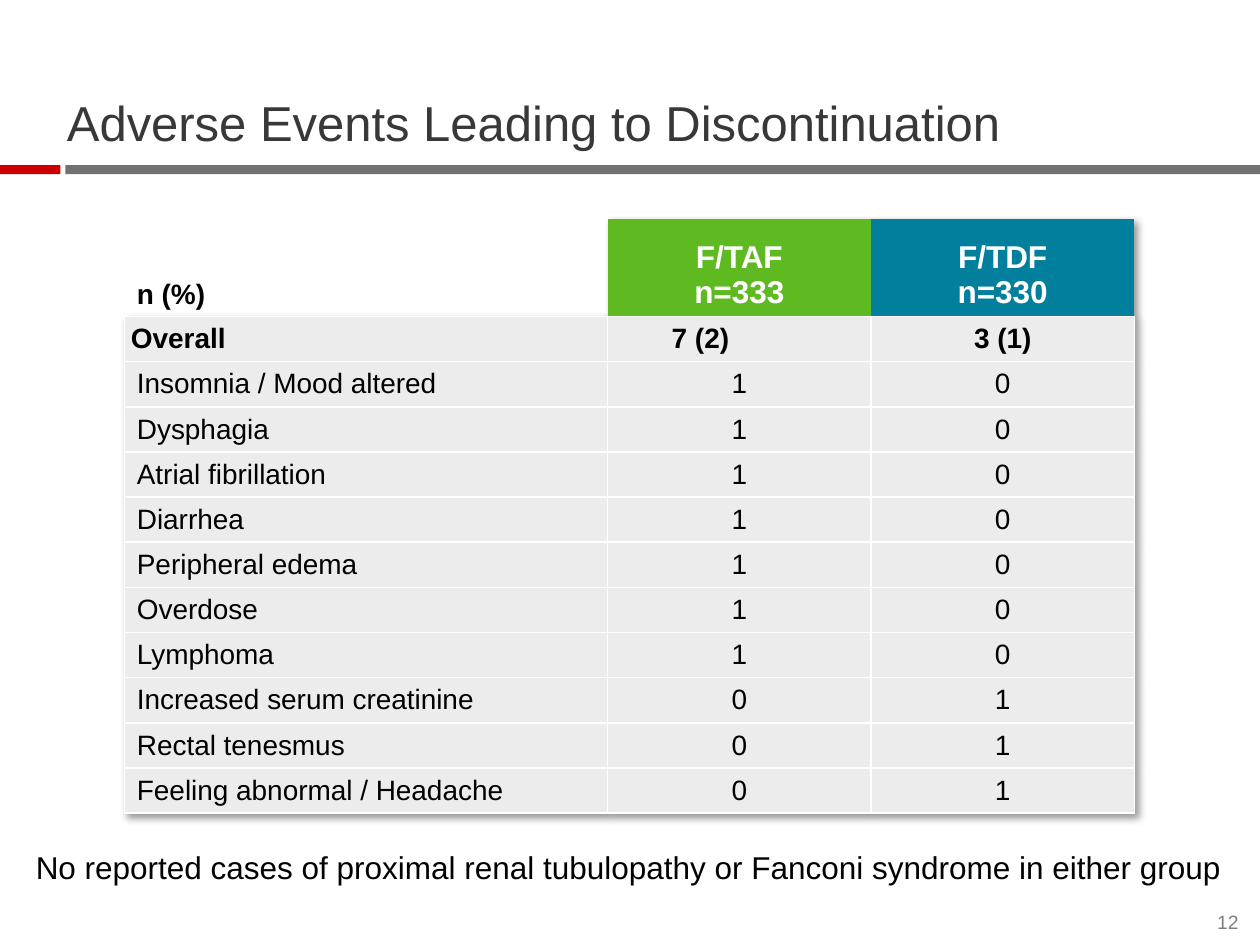
from lxml import etree
from pptx import Presentation
from pptx.dml.color import RGBColor
from pptx.enum.shapes import MSO_SHAPE
from pptx.enum.text import MSO_ANCHOR, PP_ALIGN
from pptx.oxml.ns import qn
from pptx.util import Cm, Pt

RECTANGLE = MSO_SHAPE.RECTANGLE
LEFT, CENTER, RIGHT = PP_ALIGN.LEFT, PP_ALIGN.CENTER, PP_ALIGN.RIGHT
MIDDLE, BOTTOM = MSO_ANCHOR.MIDDLE, MSO_ANCHOR.BOTTOM
PLAIN_TABLE_STYLE = "{2D5ABB26-0587-4C30-8999-92F81FD0307C}"
BLACK, WHITE = "000000", "FFFFFF"
GREEN, TEAL, PALE_GRAY = "5EBA20", "027F9C", "ECECEC"

EVENTS = [
    ("Insomnia / Mood altered", "1", "0"),
    ("Dysphagia", "1", "0"),
    ("Atrial fibrillation", "1", "0"),
    ("Diarrhea", "1", "0"),
    ("Peripheral edema", "1", "0"),
    ("Overdose", "1", "0"),
    ("Lymphoma", "1", "0"),
    ("Increased serum creatinine", "0", "1"),
    ("Rectal tenesmus", "0", "1"),
    ("Feeling abnormal / Headache", "0", "1"),
]


def color(value):
    return RGBColor.from_string(value)


class SlideBuilder:
    font = "Arial"

    def __init__(self, slide):
        self.slide = slide

    def add_lines(self, frame, lines, size, ink, align=LEFT, bold=False, spacing=None):
        for index, line in enumerate(lines):
            paragraph = frame.add_paragraph() if index else frame.paragraphs[0]
            paragraph.alignment = align
            paragraph.line_spacing = spacing
            run = paragraph.add_run()
            run.text = line
            run.font.name = self.font
            run.font.size = Pt(size)
            run.font.bold = bold
            run.font.color.rgb = color(ink)

    def bar(self, left, top, width, height, fill):
        shape = self.slide.shapes.add_shape(
            RECTANGLE, Cm(left), Cm(top), Cm(width), Cm(height))
        shape.shadow.inherit = False
        shape.fill.solid()
        shape.fill.fore_color.rgb = color(fill)
        shape.line.fill.background()

    def text(self, left, top, width, height, line, size, ink,
             align=LEFT, anchor=BOTTOM, spacing=None):
        shape = self.slide.shapes.add_textbox(
            Cm(left), Cm(top), Cm(width), Cm(height))
        frame = shape.text_frame
        frame.word_wrap = True
        frame.vertical_anchor = anchor
        frame.margin_left = frame.margin_right = 0
        frame.margin_top = frame.margin_bottom = 0
        self.add_lines(frame, [line], size, ink, align, spacing=spacing)

    def table(self, left, top, widths, heights):
        shape = self.slide.shapes.add_table(
            len(heights), len(widths), Cm(left), Cm(top),
            Cm(sum(widths)), Cm(sum(heights)))
        table = shape.table
        table.first_row = table.horz_banding = False
        for column, width in zip(table.columns, widths):
            column.width = Cm(width)
        for row, height in zip(table.rows, heights):
            row.height = Cm(height)
        properties = shape._element.graphic.graphicData.tbl.tblPr
        properties.find(qn("a:tableStyleId")).text = PLAIN_TABLE_STYLE
        effects = etree.Element(qn("a:effectLst"))
        shadow = etree.SubElement(
            effects, qn("a:outerShdw"), blurRad="50800", dist="38100",
            dir="2700000", algn="tl", rotWithShape="0")
        tone = etree.SubElement(shadow, qn("a:prstClr"), val="black")
        etree.SubElement(tone, qn("a:alpha"), val="40000")
        properties.insert(0, effects)
        return table

    def cell(self, cell, lines, size=16, ink=BLACK, align=CENTER, bold=False,
             fill=PALE_GRAY, anchor=MIDDLE, margins=(0.25, 0.1, 0.25, 0.1),
             border=WHITE):
        (cell.margin_left, cell.margin_top,
         cell.margin_right, cell.margin_bottom) = map(Cm, margins)
        cell.vertical_anchor = anchor
        if fill:
            cell.fill.solid()
            cell.fill.fore_color.rgb = color(fill)
        else:
            cell.fill.background()
        if border:
            self.borders(cell, border)
        self.add_lines(cell.text_frame, lines, size, ink, align, bold)

    def borders(self, cell, ink):
        properties = cell._tc.get_or_add_tcPr()
        for index, side in enumerate(("lnL", "lnR", "lnT", "lnB")):
            line = etree.Element(qn(f"a:{side}"), w=str(Pt(1)))
            fill = etree.SubElement(line, qn("a:solidFill"))
            etree.SubElement(fill, qn("a:srgbClr"), val=ink)
            properties.insert(index, line)


def main():
    presentation = Presentation()
    presentation.slide_width, presentation.slide_height = Cm(25.4), Cm(19.05)
    builder = SlideBuilder(
        presentation.slides.add_slide(presentation.slide_layouts[6]))

    builder.bar(1.32, 3.33, 24.08, 0.18, "717171")
    builder.bar(0, 3.33, 1.22, 0.18, "CC0000")
    builder.text(1.35, 1.19, 22.86, 1.88, "Adverse Events Leading to Discontinuation",
                 28, "383838", spacing=0.9)
    builder.text(24.28, 18.36, 0.69, 0.46, "12", 11, "7F7F7F", RIGHT)

    table = builder.table(2.51, 4.42, [9.74, 5.31, 5.31],
                          [1.96] + [0.91] * (len(EVENTS) + 1))

    header_margins = (0.25, 0.13, 0.25, 0.13)
    builder.cell(table.cell(0, 0), ["n (%)"], align=LEFT, bold=True, fill=None,
                 anchor=BOTTOM, margins=header_margins, border=None)
    arms = [("F/TAF", "n=333", GREEN), ("F/TDF", "n=330", TEAL)]
    for column, (name, count, fill) in enumerate(arms, 1):
        builder.cell(table.cell(0, column), [name, count], 18, WHITE, bold=True,
                     fill=fill, anchor=BOTTOM, margins=header_margins, border=None)

    overall = [("Overall", LEFT, 0.13), ("7 (2)", CENTER, 1.7), ("3 (1)", CENTER, 0.13)]
    for column, (label, align, right_margin) in enumerate(overall):
        builder.cell(table.cell(1, column), [label], align=align, bold=True,
                     margins=(0.13, 0.1, right_margin, 0.1))

    for row, event in enumerate(EVENTS, 2):
        for column, label in enumerate(event):
            builder.cell(table.cell(row, column), [label],
                         align=CENTER if column else LEFT)

    builder.text(0.48, 16.64, 24.38, 1.68,
                 "No reported cases of proximal renal tubulopathy or Fanconi syndrome"
                 " in either group", 18, BLACK, CENTER, MIDDLE)

    presentation.save("out.pptx")


if __name__ == "__main__":
    main()
